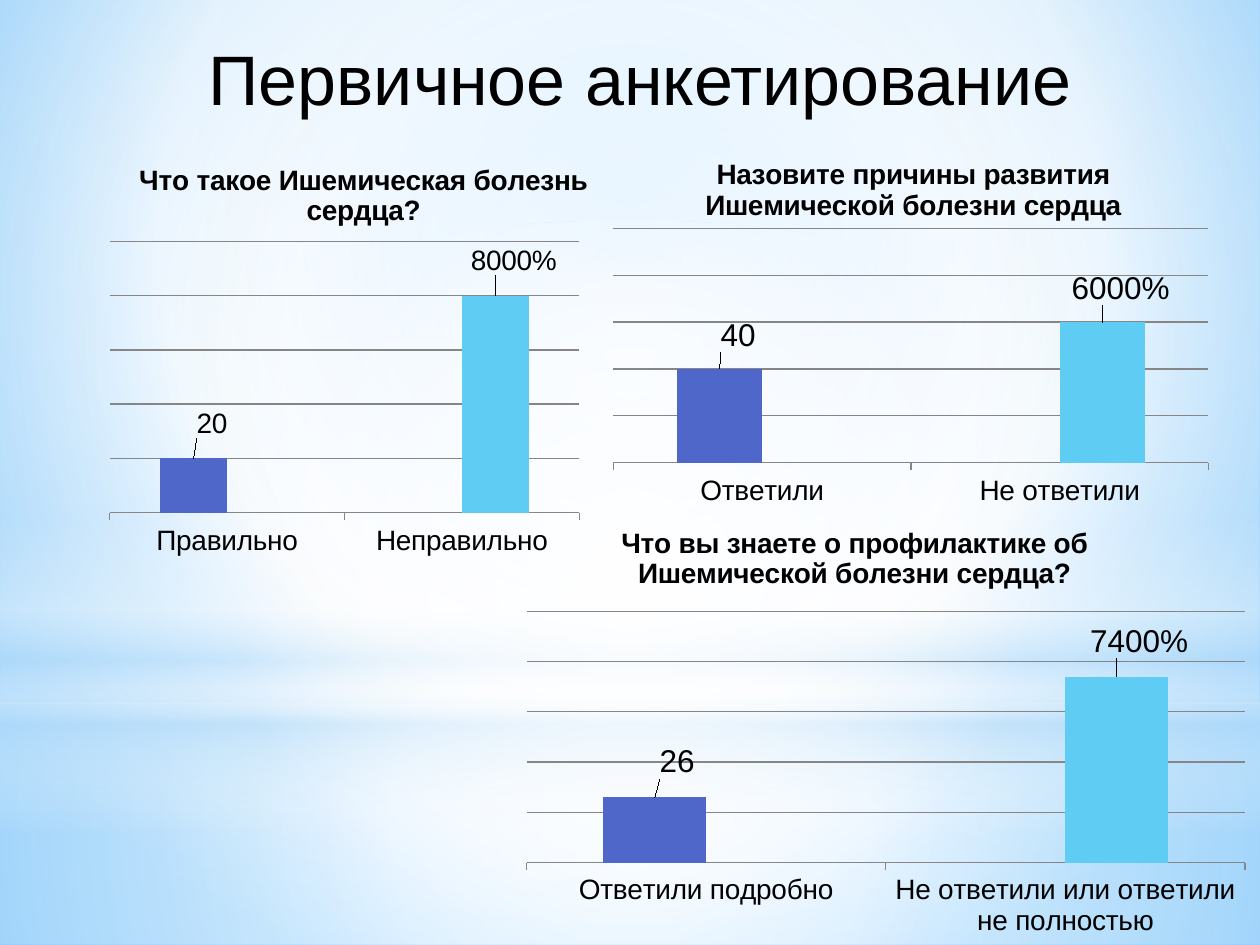
"""Build a slide with three survey column charts on a soft blue gradient."""
from dataclasses import dataclass
from typing import Optional

from lxml import etree
from pptx import Presentation
from pptx.chart.data import CategoryChartData
from pptx.dml.color import RGBColor
from pptx.enum.chart import XL_CHART_TYPE, XL_LABEL_POSITION, XL_TICK_MARK
from pptx.enum.shapes import MSO_SHAPE
from pptx.enum.text import MSO_ANCHOR, MSO_AUTO_SIZE, PP_ALIGN
from pptx.oxml.ns import qn
from pptx.util import Inches, Pt

COLUMNS = XL_CHART_TYPE.COLUMN_CLUSTERED
OUTSIDE_END = XL_LABEL_POSITION.OUTSIDE_END
TICK_OUTSIDE = XL_TICK_MARK.OUTSIDE
TICK_NONE = XL_TICK_MARK.NONE
RECTANGLE = MSO_SHAPE.RECTANGLE
OVAL = MSO_SHAPE.OVAL
MIDDLE = MSO_ANCHOR.MIDDLE
FIT_SHAPE = MSO_AUTO_SIZE.SHAPE_TO_FIT_TEXT
CENTER = PP_ALIGN.CENTER

FONT = "Arial"
BLACK = RGBColor(0x00, 0x00, 0x00)
WHITE = RGBColor(0xFF, 0xFF, 0xFF)
GREY = RGBColor(0x86, 0x86, 0x86)
INDIGO = RGBColor(0x4E, 0x67, 0xC8)
CYAN = RGBColor(0x5E, 0xCC, 0xF3)
PALE_BLUE = RGBColor(0xB4, 0xDC, 0xFA)
SKY = RGBColor(0x9E, 0xD5, 0xFF)
DEEP_SKY = RGBColor(0x5B, 0xB9, 0xFF)
SERIES_COLORS = (INDIGO, CYAN)
LABEL_FORMATS = ("General", "0%")
LABEL_SHIFT = (0.03, -0.03)
CENTERED = (50, 50, 50, 50)

Box = tuple[float, float, float, float]


@dataclass(frozen=True)
class Stop:
    position: int
    color: RGBColor
    opacity: int = 100


@dataclass(frozen=True)
class Glow:
    shape: MSO_SHAPE
    box: Box
    stops: tuple[Stop, ...]
    focus: Optional[Box] = CENTERED


@dataclass(frozen=True)
class Survey:
    title: str
    box: Box
    categories: tuple[str, str]
    values: tuple[int, int]
    title_place: tuple[float, float]
    plot_box: Box
    label_size: int = 18


BACKGROUND = (Stop(0, SKY), Stop(60, WHITE), Stop(100, DEEP_SKY))
GLOWS = (
    Glow(RECTANGLE, (0, 5.58, 10, 1.92),
         (Stop(0, WHITE, 91), Stop(37, WHITE, 76), Stop(100, PALE_BLUE, 79))),
    Glow(RECTANGLE, (0, 0, 10, 5.58),
         (Stop(0, WHITE, 89), Stop(48, WHITE, 62), Stop(100, PALE_BLUE, 79))),
    Glow(RECTANGLE, (0, 4.12, 10, 2.5),
         (Stop(0, WHITE, 0), Stop(29, WHITE, 30), Stop(45, PALE_BLUE, 40),
          Stop(55, WHITE, 26), Stop(65, PALE_BLUE, 60), Stop(100, WHITE, 0)), None),
    Glow(OVAL, (0, 1.75, 10, 5.58), (Stop(0, WHITE), Stop(56, WHITE, 0))),
)
SURVEYS = (
    Survey("Что такое Ишемическая болезнь сердца?", (0, 1.17, 4.84, 3.92),
           ("Правильно", "Неправильно"), (20, 80),
           (0.22, 0.02), (0.18, 0.19, 0.77, 0.55), 16),
    Survey("Назовите причины развития Ишемической болезни сердца", (4.77, 1.02, 4.92, 3.05),
           ("Ответили", "Не ответили"), (40, 60),
           (0.16, 0.06), (0.02, 0.26, 0.96, 0.61)),
    Survey("Что вы знаете о профилактике об Ишемической болезни сердца?",
           (4.06, 4.06, 5.94, 3.44),
           ("Ответили подробно", "Не ответили или ответили не полностью"), (26, 74),
           (0.14, 0.02), (0.02, 0.23, 0.96, 0.58)),
)


def add_node(parent, tag: str, **attributes):
    return etree.SubElement(parent, qn(tag), {key: str(value) for key, value in attributes.items()})


def set_gradient(fill, owner, stops: tuple[Stop, ...], focus: Optional[Box]) -> None:
    fill.gradient()
    gradient = owner.find(".//" + qn("a:gradFill"))
    for child in list(gradient):
        gradient.remove(child)
    stop_list = add_node(gradient, "a:gsLst")
    for stop in stops:
        node = add_node(stop_list, "a:gs", pos=stop.position * 1000)
        color = add_node(node, "a:srgbClr", val=stop.color)
        if stop.opacity < 100:
            add_node(color, "a:alpha", val=stop.opacity * 1000)
    if focus is None:
        add_node(gradient, "a:lin", ang=5400000, scaled=0)
    else:
        circle = add_node(gradient, "a:path", path="circle")
        edges = {edge: share * 1000 for edge, share in zip("ltrb", focus)}
        add_node(circle, "a:fillToRect", **edges)


def set_layout(parent, index: int, place: tuple[float, ...], is_plot: bool = False,
               is_offset: bool = False) -> None:
    for old in parent.findall(qn("c:layout")):
        parent.remove(old)
    layout = etree.Element(qn("c:layout"))
    parent.insert(index, layout)
    manual = add_node(layout, "c:manualLayout")
    if is_plot:
        add_node(manual, "c:layoutTarget", val="inner")
    if not is_offset:
        add_node(manual, "c:xMode", val="edge")
        add_node(manual, "c:yMode", val="edge")
    for key, value in zip("xywh", place):
        add_node(manual, "c:" + key, val=value)


def draw_glow(page, glow: Glow) -> None:
    shape = page.shapes.add_shape(glow.shape, *map(Inches, glow.box))
    shape.shadow.inherit = False
    shape.line.fill.background()
    set_gradient(shape.fill, shape.element, glow.stops, glow.focus)


def draw_title(page, text: str) -> None:
    title = page.shapes.title
    title.element.getparent().append(title.element)
    title.left, title.top, title.width, title.height = map(Inches, (1.25, 0.23, 7.66, 0.77))
    frame = title.text_frame
    frame.text = text
    frame.auto_size = FIT_SHAPE
    frame.vertical_anchor = MIDDLE
    frame.paragraphs[0].alignment = CENTER
    font = frame.paragraphs[0].runs[0].font
    font.name, font.size, font.color.rgb = FONT, Pt(40), BLACK


def style_axes(chart) -> None:
    category_axis, value_axis = chart.category_axis, chart.value_axis
    category_axis.major_tick_mark = TICK_OUTSIDE
    category_axis.minor_tick_mark = TICK_NONE
    category_axis.tick_labels.font.size = Pt(16)
    value_axis.minimum_scale, value_axis.maximum_scale = 0, 100
    value_axis.major_unit = 20
    value_axis.visible = False
    value_axis.has_major_gridlines = True
    for line in (category_axis.format.line, value_axis.major_gridlines.format.line):
        line.color.rgb, line.width = GREY, Pt(0.75)


def draw_survey(page, survey: Survey) -> None:
    data = CategoryChartData()
    data.categories = survey.categories
    first, second = survey.values
    data.add_series("Series 1", (first, None))
    data.add_series("Series 2", (None, second))
    chart = page.shapes.add_chart(COLUMNS, *map(Inches, survey.box), data).chart
    chart.font.name, chart.font.size = FONT, Pt(survey.label_size)
    chart.font.color.rgb = BLACK
    chart.has_legend = False
    chart.has_title = True
    frame = chart.chart_title.text_frame
    frame.text = survey.title
    font = frame.paragraphs[0].runs[0].font
    font.name, font.size, font.bold, font.color.rgb = FONT, Pt(16), True, BLACK
    set_layout(chart.chart_title.element, 1, survey.title_place)
    style_axes(chart)

    plot = chart.plots[0]
    plot.gap_width, plot.overlap, plot.vary_by_categories = 150, 0, False
    for index, (series, color) in enumerate(zip(plot.series, SERIES_COLORS)):
        series.format.fill.solid()
        series.format.fill.fore_color.rgb = color
        label = series.points[index].data_label
        label.position = OUTSIDE_END
        label.font.name, label.font.size = FONT, Pt(survey.label_size)
        label.font.color.rgb = BLACK
    plot_area = chart.element.find(".//" + qn("c:plotArea"))
    set_layout(plot_area, 0, survey.plot_box, is_plot=True)
    for label, number_format in zip(plot_area.iter(qn("c:dLbl")), LABEL_FORMATS):
        set_layout(label, 1, LABEL_SHIFT, is_offset=True)
        node = add_node(label, "c:numFmt", formatCode=number_format, sourceLinked=0)
        label.insert(2, node)


def main() -> None:
    deck = Presentation()
    deck.slide_width, deck.slide_height = Inches(10), Inches(7.5)
    page = deck.slides.add_slide(deck.slide_layouts[5])
    set_gradient(page.background.fill, page.element, BACKGROUND, (20, 10, 20, 60))
    for glow in GLOWS:
        draw_glow(page, glow)
    draw_title(page, "Первичное анкетирование")
    for survey in SURVEYS:
        draw_survey(page, survey)
    deck.save("out.pptx")


if __name__ == "__main__":
    main()
